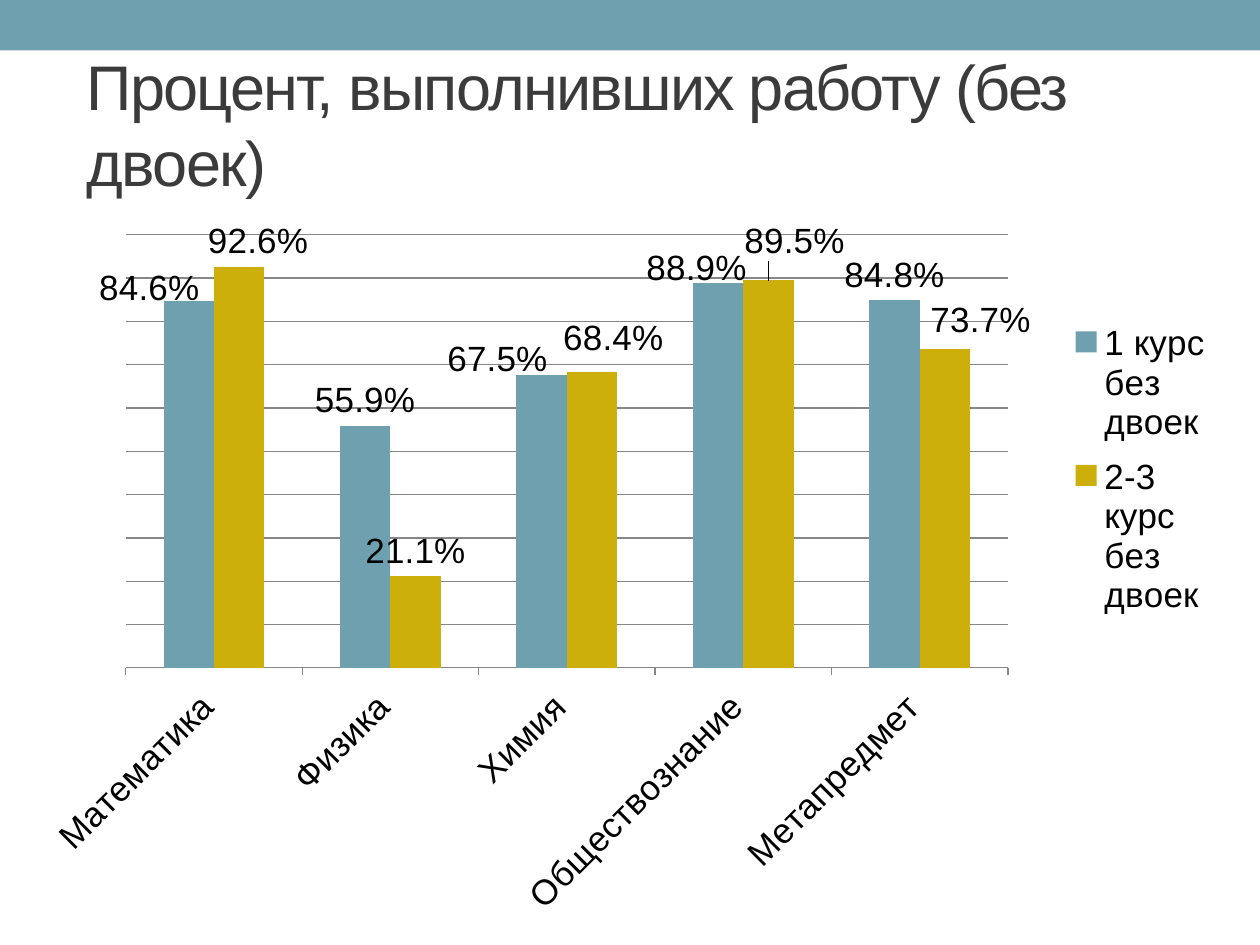
from lxml.etree import SubElement
from pptx import Presentation
from pptx.chart.data import CategoryChartData
from pptx.dml.color import RGBColor
from pptx.enum.chart import (XL_CHART_TYPE, XL_LABEL_POSITION,
                             XL_LEGEND_POSITION, XL_TICK_MARK)
from pptx.enum.shapes import MSO_SHAPE
from pptx.enum.text import MSO_ANCHOR
from pptx.oxml.ns import qn
from pptx.util import Inches, Pt

FONT = "Arial"
C15 = "http://schemas.microsoft.com/office/drawing/2012/chart"
LABELS_EXT = "{CE6537A1-D6FC-4f65-9D91-7224C49458BB}"
COLORS = {"teal": "6EA0B0", "gold": "CCAF0A", "title": "3B3B3B",
          "text": "000000", "line": "868686"}
SUBJECTS = [" Математика ", " Физика ", " Химия ", " Обществознание ",
            " Метапредмет "]
SERIES = [
    {"name": "1 курс без двоек", "color": "teal",
     "values": [0.846, 0.559, 0.675, 0.889, 0.848],
     "shifts": {0: (-0.033, 0.016), 2: (-0.037, 0.012), 3: (-0.018, 0.014)}},
    {"name": "2-3 курс без двоек", "color": "gold",
     "values": [0.926, 0.211, 0.684, 0.895, 0.737],
     "shifts": {0: (0.016, 0), 2: (0.018, -0.011), 3: (0.022, -0.019),
                4: (0.03, -0.005)}},
]


def rgb(name):
    """Return the named colour."""
    return RGBColor.from_string(COLORS[name])


def set_font(font, size, color):
    """Apply the slide font in a size and colour."""
    font.name, font.size, font.bold = FONT, Pt(size), False
    font.color.rgb = rgb(color)


def set_layout(parent, index, **settings):
    """Give a chart part a manual layout at a child index."""
    for old in parent.findall(qn("c:layout")):
        parent.remove(old)
    layout = SubElement(parent, qn("c:layout"))
    manual = SubElement(layout, qn("c:manualLayout"))
    for tag, value in settings.items():
        SubElement(manual, qn(f"c:{tag}")).set("val", str(value))
    parent.insert(index, layout)


def hide_leader_lines(labels):
    """Turn off the lines from moved labels to their columns."""
    extensions = SubElement(labels._element, qn("c:extLst"))
    ext = SubElement(extensions, qn("c:ext"), nsmap={"c15": C15})
    ext.set("uri", LABELS_EXT)
    SubElement(ext, f"{{{C15}}}showLeaderLines").set("val", "0")


def add_band(slide, left, top, width, height):
    """Draw the coloured band."""
    sp = slide.shapes.add_shape(MSO_SHAPE.RECTANGLE, left, top, width, height)
    sp.shadow.inherit = False
    sp.fill.solid()
    sp.fill.fore_color.rgb = rgb("teal")
    sp.line.fill.background()


def add_title(slide, left, top, width, height):
    """Write the slide title."""
    tf = slide.shapes.add_textbox(left, top, width, height).text_frame
    tf.word_wrap = True
    tf.vertical_anchor = MSO_ANCHOR.MIDDLE
    tf.text = "Процент, выполнивших работу (без двоек)"
    r = tf.paragraphs[0].runs[0]
    set_font(r.font, 36, "title")
    r.font._element.set("spc", "-100")


def style_axes(chart):
    """Style the slanted subject axis and the hidden percent axis."""
    subjects, percents = chart.category_axis, chart.value_axis
    subjects.major_tick_mark = XL_TICK_MARK.OUTSIDE
    subjects.format.line.color.rgb = rgb("line")
    set_font(subjects.tick_labels.font, 20, "text")
    body = subjects._element.find(qn("c:txPr")).find(qn("a:bodyPr"))
    body.set("rot", "-2700000")
    body.set("vert", "horz")
    percents.visible = False
    percents.minimum_scale, percents.maximum_scale = 0, 1
    percents.major_unit = 0.1
    percents.has_major_gridlines = True
    percents.major_gridlines.format.line.color.rgb = rgb("line")


def style_legend(chart):
    """Place the legend in the free strip right of the columns."""
    chart.has_legend = True
    legend = chart.legend
    legend.position = XL_LEGEND_POSITION.RIGHT
    legend.include_in_layout = False
    set_font(legend.font, 20, "text")
    set_layout(legend._element, 1, xMode="edge", yMode="edge",
               x=0.863, y=0.13, w=0.13, h=0.44)


def style_series(series, color, shifts):
    """Colour a series and place its value labels."""
    series.format.fill.solid()
    series.format.fill.fore_color.rgb = rgb(color)
    series.invert_if_negative = False
    labels = series.data_labels
    labels.show_value = True
    labels.number_format, labels.number_format_is_linked = "0.0%", False
    labels.position = XL_LABEL_POSITION.OUTSIDE_END
    set_font(labels.font, 20, "text")
    for i in shifts:
        label = series.points[i].data_label
        label.position = XL_LABEL_POSITION.OUTSIDE_END
        set_font(label.font, 20, "text")
    for label in series._element.iter(qn("c:dLbl")):
        x, y = shifts[int(label.find(qn("c:idx")).get("val"))]
        set_layout(label, 1, x=x, y=y)
    hide_leader_lines(labels)


def add_results_chart(slide, left, top, width, height):
    """Add the column chart of pass rates."""
    data = CategoryChartData(number_format="0.0%")
    data.categories = SUBJECTS
    for item in SERIES:
        data.add_series(item["name"], item["values"])
    chart = slide.shapes.add_chart(XL_CHART_TYPE.COLUMN_CLUSTERED, left, top,
                                   width, height, data).chart
    set_font(chart.font, 20, "text")
    chart.has_title = False
    plot = chart.plots[0]
    plot.gap_width, plot.overlap, plot.vary_by_categories = 150, 0, False
    style_axes(chart)
    style_legend(chart)
    for series, item in zip(plot.series, SERIES):
        style_series(series, item["color"], item["shifts"])
    area = chart._chartSpace.find(qn("c:chart")).find(qn("c:plotArea"))
    set_layout(area, 0, layoutTarget="inner", xMode="edge", yMode="edge",
               x=0.076, y=0.028, w=0.741, h=0.593)


def main():
    """Build and save the slide."""
    prs = Presentation()
    prs.slide_width, prs.slide_height = Inches(10), Inches(7.5)
    slide = prs.slides.add_slide(prs.slide_layouts[6])
    add_band(slide, 0, 0, prs.slide_width, Inches(0.4))
    add_title(slide, Inches(0.59), Inches(0.44), Inches(9), Inches(1.08))
    add_results_chart(slide, Inches(0.28), Inches(1.7), Inches(9.45), Inches(5.8))
    prs.save("out.pptx")


if __name__ == "__main__":
    main()
